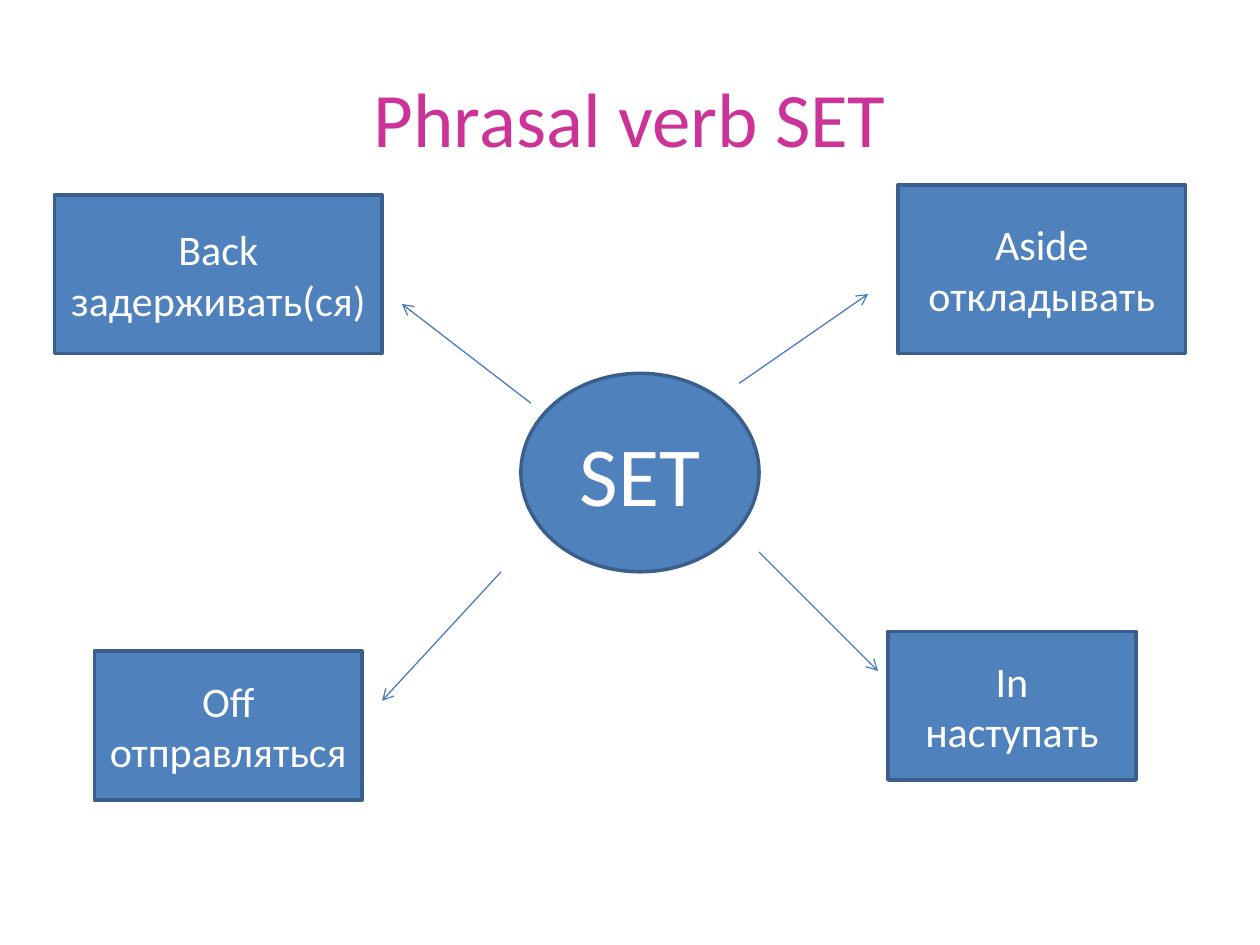
from dataclasses import dataclass

from lxml.etree import SubElement
from pptx import Presentation
from pptx.dml.color import RGBColor as Rgb
from pptx.enum.shapes import MSO_CONNECTOR as Link, MSO_SHAPE as Preset
from pptx.enum.text import MSO_ANCHOR as Anchor, PP_ALIGN as Align
from pptx.oxml.ns import qn
from pptx.util import Inches, Pt


@dataclass(frozen=True)
class Theme:
    font: str = "Calibri"
    heading: Rgb = Rgb(0xCC, 0x33, 0x99)
    fill: Rgb = Rgb(0x4F, 0x81, 0xBD)
    border: Rgb = Rgb(0x3A, 0x5F, 0x8C)
    arrow: Rgb = Rgb(0x4B, 0x7E, 0xBC)
    label: Rgb = Rgb(0xFF, 0xFF, 0xFF)
    heading_size: int = 44
    verb_size: int = 48
    particle_size: int = 24
    border_width: float = 2
    arrow_width: float = 0.75


THEME = Theme()
WIDTH, HEIGHT = Inches(10), Inches(7.5)
CELL = WIDTH / 127
LEFT, TOP = Inches(0.04), Inches(0.05)

VERB_BOX = (52, 37, 24, 20)
PARTICLES = [
    ("Aside", "откладывать", (90, 18, 29, 17), (74, 38, 87, 29)),
    ("In", "наступать", (89, 63, 25, 15), (76, 55, 88, 67)),
    ("Off", "отправляться", (9, 65, 27, 15), (50, 57, 38, 70)),
    ("Back", "задерживать(ся)", (5, 19, 33, 16), (53, 40, 40, 30)),
]


def point(column, row):
    return round(LEFT + column * CELL), round(TOP + row * CELL)


def write(frame, lines, size, color):
    frame.word_wrap = True
    frame.vertical_anchor = Anchor.MIDDLE
    for index, line in enumerate(lines):
        paragraph = frame.add_paragraph() if index else frame.paragraphs[0]
        paragraph.alignment = Align.CENTER
        run = paragraph.add_run()
        run.text = line
        run.font.name = THEME.font
        run.font.size = Pt(size)
        run.font.color.rgb = color


def place_heading(slide, box, heading):
    left, top, width, height = box
    title = slide.shapes.title
    title.left, title.top = round(left * WIDTH), round(top * HEIGHT)
    title.width, title.height = round(width * WIDTH), round(height * HEIGHT)
    write(title.text_frame, [heading], THEME.heading_size, THEME.heading)


def place_node(slide, box, preset, lines, size):
    column, row, columns, rows = box
    node = slide.shapes.add_shape(
        preset, *point(column, row), round(columns * CELL), round(rows * CELL)
    )
    node.shadow.inherit = False
    node.fill.solid()
    node.fill.fore_color.rgb = THEME.fill
    node.line.color.rgb = THEME.border
    node.line.width = Pt(THEME.border_width)
    write(node.text_frame, lines, size, THEME.label)


def place_arrow(slide, ends):
    start, tip = point(*ends[:2]), point(*ends[2:])
    arrow = slide.shapes.add_connector(Link.STRAIGHT, *start, *tip)
    arrow.line.color.rgb = THEME.arrow
    arrow.line.width = Pt(THEME.arrow_width)
    SubElement(arrow.line._get_or_add_ln(), qn("a:tailEnd"), type="arrow")
    SubElement(arrow._element.spPr, qn("a:effectLst"))


def build_verb_map(slide):
    place_heading(slide, (0.05, 0.04, 0.9, 1 / 6), "Phrasal verb SET")
    place_node(slide, VERB_BOX, Preset.OVAL, ["SET"], THEME.verb_size)
    for particle, meaning, box, ends in PARTICLES:
        place_arrow(slide, ends)
        place_node(
            slide, box, Preset.RECTANGLE, [particle, meaning], THEME.particle_size
        )


def main():
    deck = Presentation()
    deck.slide_width, deck.slide_height = WIDTH, HEIGHT
    build_verb_map(deck.slides.add_slide(deck.slide_layouts[5]))
    deck.save("out.pptx")


if __name__ == "__main__":
    main()
